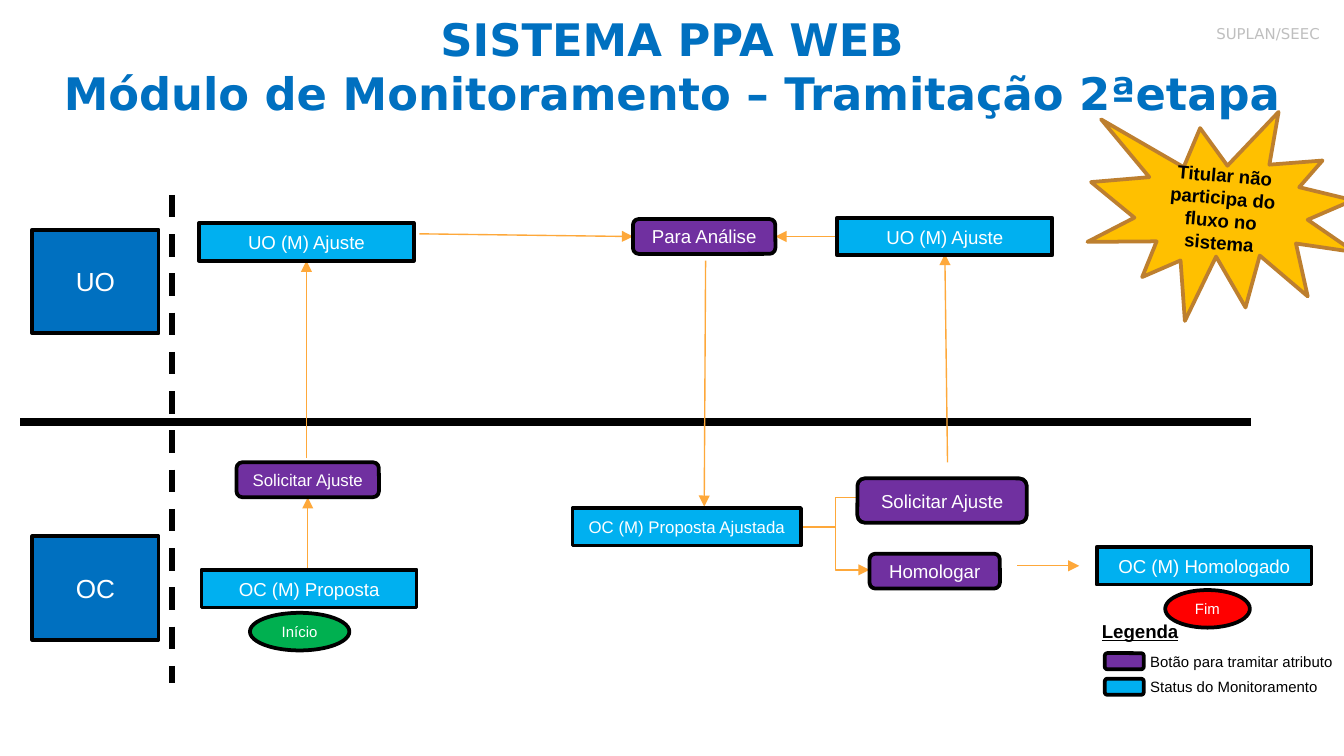
from dataclasses import dataclass

from pptx import Presentation
from pptx.dml.color import RGBColor
from pptx.enum.dml import MSO_LINE
from pptx.enum.shapes import MSO_CONNECTOR as Connector, MSO_SHAPE as Shape
from pptx.enum.text import MSO_ANCHOR as Anchor, MSO_AUTO_SIZE as AutoSize, PP_ALIGN as Align
from pptx.oxml.ns import qn
from pptx.util import Emu, Pt

EMU_PER_PX = 9144  # 100 px to the inch


@dataclass(frozen=True)
class Theme:
    # Colours
    blue: str = "0070C0"
    status: str = "00B0F0"
    button: str = "7030A0"
    start: str = "00B050"
    finish: str = "FF0000"
    burst: str = "FFC000"
    burst_line: str = "BD7F2F"
    arrow: str = "FEA83A"
    black: str = "000000"
    white: str = "FFFFFF"
    grey: str = "BFBFBF"
    # Fonts and type sizes
    heading_font: str = "DejaVu Sans"
    body_font: str = "Arial"
    title: int = 24
    lane: int = 14
    body: int = 10
    compact: int = 9
    small: int = 8
    # Line widths
    outline: float = 2
    arrow_width: float = 0.75


THEME = Theme()


def px(*lengths):
    return [Emu(length * EMU_PER_PX) for length in lengths]


def write(shape, text, size, color, align=Align.CENTER, font_name=THEME.body_font,
          bold=False, underline=False):
    paragraph = shape.text_frame.paragraphs[0]
    paragraph.text = text
    paragraph.alignment = align
    font = paragraph.font
    font.name, font.size = font_name, Pt(size)
    font.bold, font.underline = bold, underline
    font.color.rgb = RGBColor.from_string(color)


def add_node(slide, kind, box, fill, text="", size=THEME.body, color=THEME.white,
             outline=THEME.black, bold=False):
    shape = slide.shapes.add_shape(kind, *px(*box))
    shape.shadow.inherit = False
    shape.fill.solid()
    shape.fill.fore_color.rgb = RGBColor.from_string(fill)
    shape.line.color.rgb = RGBColor.from_string(outline)
    shape.line.width = Pt(THEME.outline)
    if text:
        shape.text_frame.word_wrap = True
        shape.text_frame.vertical_anchor = Anchor.MIDDLE
        write(shape, text, size, color, bold=bold)
    return shape


def add_label(slide, box, text, size, color=THEME.black, **style):
    label = slide.shapes.add_textbox(*px(*box))
    label.text_frame.word_wrap = True
    write(label, text, size, color, **{"align": Align.LEFT, **style})
    return label


def add_line(slide, points, color, width, kind=Connector.STRAIGHT):
    connector = slide.shapes.add_connector(kind, *px(*points))
    connector.line.color.rgb = RGBColor.from_string(color)
    connector.line.width = Pt(width)
    properties = connector.element.spPr
    properties.append(properties.makeelement(qn("a:effectLst"), {}))
    return connector


def add_arrow(slide, points, kind=Connector.STRAIGHT):
    connector = add_line(slide, points, THEME.arrow, THEME.arrow_width, kind)
    line = connector.element.spPr.find(qn("a:ln"))
    line.append(line.makeelement(qn("a:tailEnd"), {"type": "triangle"}))


def add_title(slide, box, text):
    title = slide.shapes.title
    title.left, title.top, title.width, title.height = px(*box)
    frame = title.text_frame
    frame.word_wrap = True
    frame.auto_size = AutoSize.NONE
    frame.vertical_anchor = Anchor.TOP
    frame.margin_top = frame.margin_bottom = px(10)[0]
    write(title, text, THEME.title, THEME.blue, font_name=THEME.heading_font, bold=True)


def add_header(slide):
    add_title(slide, (34, -1, 932, 120),
              "SISTEMA PPA WEB\vMódulo de Monitoramento – Tramitação 2ªetapa")
    unit = add_label(slide, (829, 8, 163, 45), "SUPLAN/SEEC", THEME.small, THEME.grey,
                     align=Align.RIGHT, font_name=THEME.heading_font)
    unit.text_frame.margin_top = px(10)[0]
    burst = add_node(slide, Shape.EXPLOSION1, (810, 80, 200, 161), THEME.burst,
                     "Titular não participa do fluxo no sistema",
                     color=THEME.black, outline=THEME.burst_line, bold=True)
    burst.rotation = 5


def add_lanes(slide):
    add_line(slide, (15, 314, 931, 314), THEME.black, 4.5)
    divider = add_line(slide, (128, 145, 128, 508), THEME.black, 3)
    divider.line.dash_style = MSO_LINE.DASH
    for top, name in ((171, "UO"), (399, "OC")):
        add_node(slide, Shape.RECTANGLE, (24, top, 94, 77), THEME.blue, name, THEME.lane)


def add_flow(slide):
    # Monitoring statuses
    for left, top, width, text, size in (
        (150, 424, 160, "OC (M) Proposta", THEME.body),
        (816, 407, 160, "OC (M) Homologado", THEME.body),
        (426, 378, 170, "OC (M) Proposta Ajustada", THEME.compact),
        (148, 166, 160, "UO (M) Ajuste", THEME.body),
        (623, 162, 160, "UO (M) Ajuste", THEME.body),
    ):
        add_node(slide, Shape.RECTANGLE, (left, top, width, 28), THEME.status, text, size)

    # Buttons
    for box, text, size in (
        ((471, 163, 106, 26), "Para Análise", THEME.body),
        ((176, 344, 106, 26), "Solicitar Ajuste", THEME.compact),
        ((647, 412, 97, 26), "Homologar", THEME.body),
        ((638, 356, 126, 33), "Solicitar Ajuste", THEME.body),
    ):
        add_node(slide, Shape.ROUNDED_RECTANGLE, box, THEME.button, text, size)

    # Start and end
    add_node(slide, Shape.OVAL, (186, 456, 74, 28), THEME.start, "Início", THEME.small)
    add_node(slide, Shape.OVAL, (867, 439, 63, 28), THEME.finish, "Fim", THEME.small)


def add_arrows(slide):
    for points in (
        (229, 424, 229, 370),  # proposal to request
        (228, 341, 228, 194),  # request to adjustment
        (312, 174, 471, 176),  # adjustment to analysis
        (525, 194, 524, 377),  # analysis to adjusted proposal
        (705, 344, 703, 189),  # second request to adjustment
        (623, 176, 577, 176),  # second adjustment to analysis
        (757, 421, 803, 421),  # approval to approved
    ):
        add_arrow(slide, points)
    # The adjusted proposal branches to both buttons
    for end_x, end_y in ((647, 424), (647, 370)):
        add_arrow(slide, (596, 392, end_x, end_y), Connector.ELBOW)


def add_legend(slide):
    add_label(slide, (810, 456, 94, 27), "Legenda", THEME.body, bold=True, underline=True)
    for top, label_top, width, fill, text in (
        (486, 481, 160, THEME.button, "Botão para tramitar atributo"),
        (505, 499, 146, THEME.status, "Status do Monitoramento"),
    ):
        add_node(slide, Shape.ROUNDED_RECTANGLE, (822, top, 29, 12), fill)
        add_label(slide, (846, label_top, width, 24), text, THEME.small)


def main():
    presentation = Presentation()
    # A 16:9 slide, 10 inches wide
    presentation.slide_width = px(1000)[0]
    presentation.slide_height = Emu(presentation.slide_width * 9 // 16)
    slide = presentation.slides.add_slide(presentation.slide_layouts[5])
    add_header(slide)
    add_lanes(slide)
    add_arrows(slide)
    add_flow(slide)
    add_legend(slide)
    presentation.save("out.pptx")


if __name__ == "__main__":
    main()
